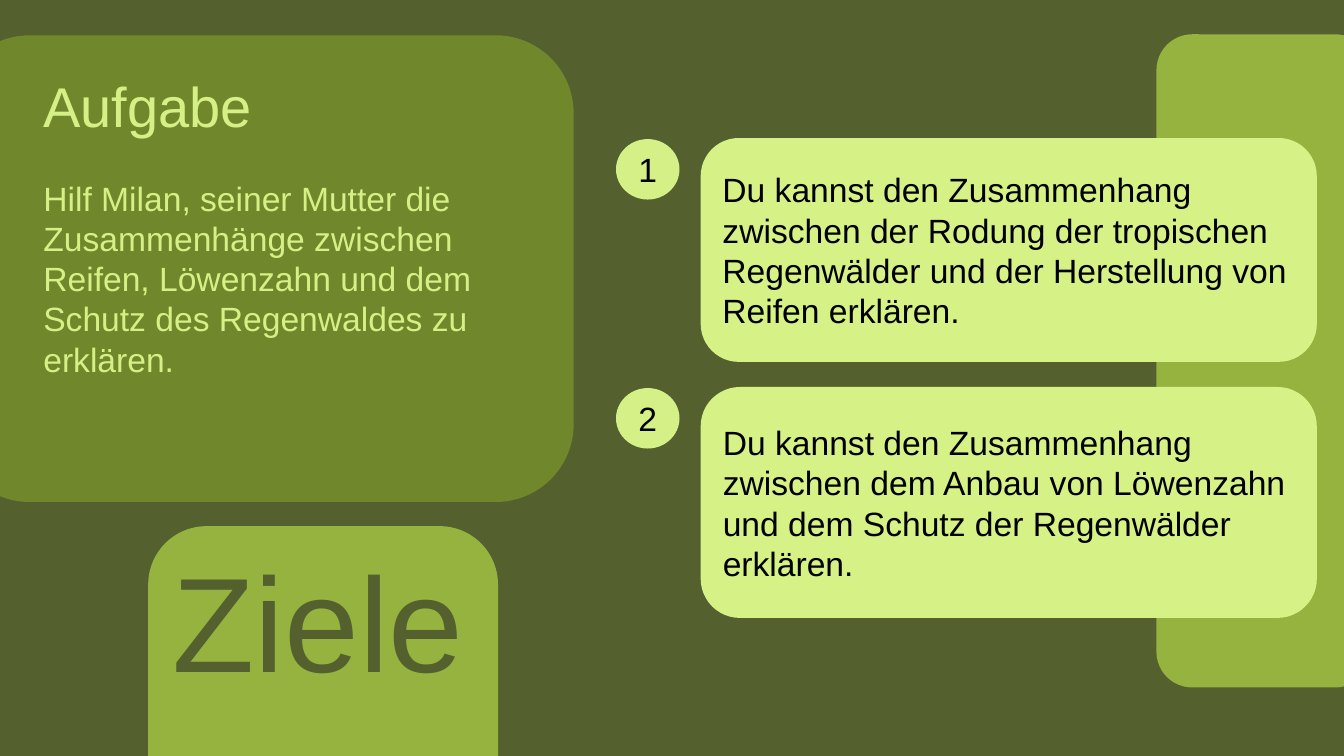
"""Build the slide with the task and its two learning goals."""
from pptx import Presentation
from pptx.dml.color import RGBColor
from pptx.enum.shapes import MSO_SHAPE
from pptx.enum.text import MSO_ANCHOR, MSO_AUTO_SIZE, PP_ALIGN
from pptx.oxml.ns import qn
from pptx.util import Inches, Pt

DARK_OLIVE = RGBColor(0x54, 0x61, 0x2E)
OLIVE = RGBColor(0x70, 0x87, 0x2B)
LEAF = RGBColor(0x96, 0xB3, 0x40)
LIME = RGBColor(0xD5, 0xF0, 0x86)
CARD_LIME = RGBColor(0xD6, 0xF1, 0x86)
BLACK = RGBColor(0, 0, 0)


class GoalSlide:
    """Hold the style and the current slide."""

    font = "Arial"
    text_size = 24

    def __init__(self, presentation):
        """Add a slide with a title and a body on a dark ground."""
        self.slide = presentation.slides.add_slide(presentation.slide_layouts[1])
        self.slide.background.fill.solid()
        self.slide.background.fill.fore_color.rgb = DARK_OLIVE

    def add_text(self, paragraph, text, size, color, align=PP_ALIGN.LEFT):
        """Add one formatted run to a paragraph."""
        paragraph.alignment = align
        run = paragraph.add_run()
        run.text = text
        run.font.name = self.font
        run.font.size = Pt(size)
        run.font.color.rgb = color

    def panel(self, kind, box, fill, rotation=0):
        """Add a flat filled shape without outline."""
        panel = self.slide.shapes.add_shape(kind, *map(Inches, box))
        panel.shadow.inherit = False
        panel.rotation = rotation
        panel.fill.solid()
        panel.fill.fore_color.rgb = fill
        panel.line.fill.background()
        return panel

    def goal(self, number, text, top, height):
        """Add a numbered badge and the card beside it."""
        badge = self.panel(MSO_SHAPE.FLOWCHART_CONNECTOR, (6.11, top, 0.63, 0.6), LIME)
        frame = badge.text_frame
        frame.margin_left = frame.margin_right = Inches(0)
        frame.margin_top = frame.margin_bottom = Inches(0)
        frame.word_wrap = False
        self.add_text(frame.paragraphs[0], number, self.text_size, BLACK, PP_ALIGN.CENTER)

        card = self.panel(MSO_SHAPE.ROUNDED_RECTANGLE, (6.96, top, 6.09, height), CARD_LIME)
        card.line.color.rgb = CARD_LIME
        card.line.width = Pt(1.5)
        card.text_frame.vertical_anchor = MSO_ANCHOR.MIDDLE
        self.add_text(card.text_frame.paragraphs[0], text, self.text_size, BLACK)

    def place(self, holder, box):
        """Move a placeholder to a box in front of the panels."""
        holder.left, holder.top, holder.width, holder.height = map(Inches, box)
        holder.element.getparent().append(holder.element)
        frame = holder.text_frame
        frame.word_wrap = True
        frame.auto_size = MSO_AUTO_SIZE.NONE
        frame.vertical_anchor = MSO_ANCHOR.TOP
        return frame

    def title(self, text, box):
        """Fill the title placeholder."""
        frame = self.place(self.slide.shapes.title, box)
        self.add_text(frame.paragraphs[0], text, 96, DARK_OLIVE)

    def task(self, heading, text, box):
        """Fill the body placeholder with a heading and its text."""
        frame = self.place(self.slide.placeholders[1], box)
        head, detail = frame.paragraphs[0], frame.add_paragraph()
        self.add_text(head, heading, 40, LIME)
        self.add_text(detail, text, self.text_size, LIME)
        for paragraph in (head, detail):
            paragraph.space_before = Pt(0)
        head.space_after = Pt(27.6)
        for paragraph in (head, detail):
            properties = paragraph._p.get_or_add_pPr()
            properties.set("marL", "0")
            properties.set("indent", "0")
            properties.append(properties.makeelement(qn("a:buNone"), {}))


def main():
    """Compose and save the slide."""
    presentation = Presentation()
    presentation.slide_width = Inches(13.33)
    presentation.slide_height = Inches(7.5)
    page = GoalSlide(presentation)

    rounded = MSO_SHAPE.ROUNDED_RECTANGLE
    page.panel(rounded, (11.47, 0.34, 2.13, 6.48), LEAF)
    page.panel(rounded, (1.47, 5.22, 3.47, 3.97), LEAF)
    page.panel(rounded, (0.29, -0.42, 4.63, 6.17), OLIVE, rotation=270)

    page.task(
        "Aufgabe",
        "Hilf Milan, seiner Mutter die Zusammenhänge zwischen Reifen, "
        "Löwenzahn und dem Schutz des Regenwaldes zu erklären.",
        (0.33, 0.66, 5.08, 4.01),
    )
    page.title("Ziele", (1.61, 5.29, 3.5, 1.67))
    page.goal(
        "1",
        "Du kannst den Zusammenhang zwischen der Rodung der tropischen "
        "Regenwälder und der Herstellung von Reifen erklären.",
        1.38, 2.2,
    )
    page.goal(
        "2",
        "Du kannst den Zusammenhang zwischen dem Anbau von Löwenzahn "
        "und dem Schutz der Regenwälder erklären.",
        3.85, 2.27,
    )
    presentation.save("out.pptx")


if __name__ == "__main__":
    main()
